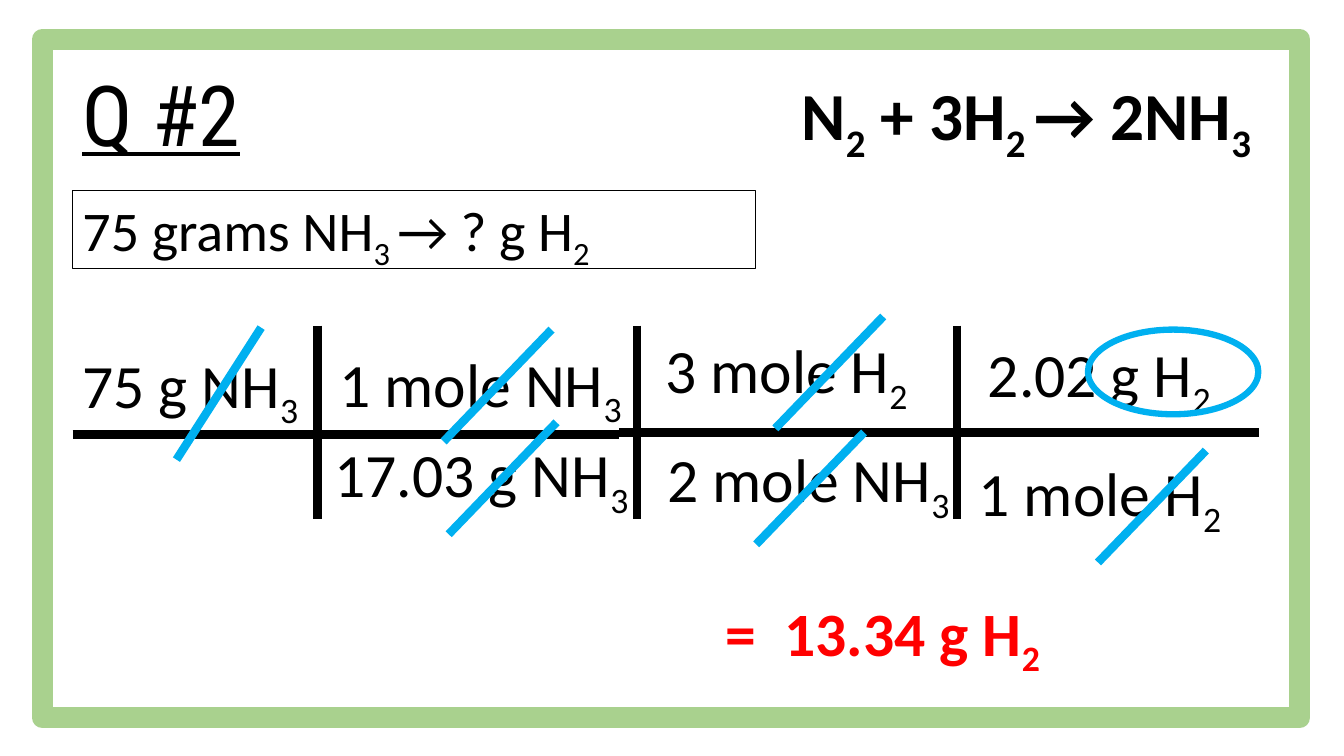
from pptx import Presentation, util as u
from pptx.dml.color import RGBColor
from pptx.enum import shapes, text
from pptx.oxml.ns import qn
from lxml import etree

BLACK = RGBColor(0x00, 0x00, 0x00)
WHITE = RGBColor(0xFF, 0xFF, 0xFF)
GREEN = RGBColor(0xA9, 0xD1, 0x8E)
BLUE = RGBColor(0x00, 0xB0, 0xF0)
RED = RGBColor(0xFF, 0x00, 0x00)

UNIT = u.Inches(0.1)  # one column or row of the slide grid
CELL_HEIGHT = 7.7
RECT = shapes.MSO_SHAPE.RECTANGLE
TOP, MIDDLE = text.MSO_ANCHOR.TOP, text.MSO_ANCHOR.MIDDLE


def grid(*lengths):
    return [round(length * UNIT) for length in lengths]


def write(shape, spans, size, color=BLACK, anchor=TOP, align=text.PP_ALIGN.LEFT,
          **formats):
    """Fill a shape with spans; every second span is a subscript."""
    frame = shape.text_frame
    frame.word_wrap = True
    frame.vertical_anchor = anchor
    para = frame.paragraphs[0]
    para.alignment = align
    formats = {"name": "Calibri", "size": u.Pt(size), **formats}
    for index, words in enumerate(spans):
        span = para.add_run()
        span.text = words
        for key, value in formats.items():
            setattr(span.font, key, value)
        span.font.color.rgb = color
        if index % 2:
            span.font._element.set("baseline", "-25000")
    return para


def draw_shape(page, kind, place, line, width, fill=None):
    shape = page.shapes.add_shape(kind, *grid(*place))
    shape.shadow.inherit = False
    if fill is None:
        shape.fill.background()
    else:
        shape.fill.solid()
        shape.fill.fore_color.rgb = fill
    shape.line.color.rgb = line
    shape.line.width = u.Pt(width)
    return shape


def draw_line(page, x, y, dx, dy, color):
    line = page.shapes.add_connector(
        shapes.MSO_CONNECTOR.STRAIGHT, *grid(x, y, x + dx, y + dy))
    line.line.color.rgb = color
    line.line.width = u.Pt(6)
    etree.SubElement(line._element.spPr, qn("a:effectLst"))


def add_heading(page, left, top, width):
    title = page.shapes.add_textbox(*grid(left, top, width / 2, 9.8))
    para = write(title, ["Q #2"], 60, name="Roboto Condensed", underline=True)
    para.line_spacing = 0.9
    equation = page.shapes.add_textbox(*grid(left + width - 54, top, 60, 9.1))
    write(equation, ["N", "2", " + 3H", "2 ", "→ 2NH", "3"], 48,
          align=text.PP_ALIGN.CENTER, bold=True)


def add_question(page, *place):
    box = draw_shape(page, RECT, place, BLACK, 0.75)
    write(box, ["75 grams NH", "3 ", "→ ? g H", "2"], 40)


def add_conversion(page, left, top):
    """Draw the unit factors, their dividers and the cancelled units."""
    factors = [
        (0, 3.3, 44, "75 g NH", "3"),
        (25, 12.2, 49.5, "17.03 g NH", "3"),
        (25.5, 3.2, 40.9, "1 mole NH", "3"),
        (58, 12.7, 30.4, "2 mole NH", "3"),
        (57.8, 1.9, 33.8, "3 mole H", "2"),
        (88.9, 14.1, 29.7, "1 mole H", "2"),
        (89.8, 2.2, 29.7, "2.02 g H", "2"),
    ]
    for x, y, width, *spans in factors:
        place = left + x, top + y, width, CELL_HEIGHT
        box = draw_shape(page, RECT, place, WHITE, 1, WHITE)
        write(box, spans, 44, anchor=MIDDLE)

    for column in range(3):
        draw_line(page, left + 24.3 + 31.7 * column, top + 0.9, 0, 19.2, BLACK)
    for x, y, width in [(0, 11.7, 54.2), (54.2, 11.5, 32), (85.7, 11.5, 32)]:
        draw_line(page, left + x, top + y, width, 0, BLACK)

    draw_line(page, left + 18.7, top + 1.1, -8.4, 13.1, BLUE)
    for x, y in [(48, 10.5), (47.5, 1.3), (78.5, 11.5), (80.4, 0), (112.4, 13.3)]:
        draw_line(page, left + x, top + y, -10.7, 11.1, BLUE)
    draw_shape(page, shapes.MSO_SHAPE.OVAL,
               (left + 100.7, top + 1.3, 16.9, 8.4), BLUE, 4.5)


def add_answer(page, *place):
    box = draw_shape(page, RECT, place, WHITE, 1, WHITE)
    para = write(box, ["=\t13.34 g H", "2"], 44, RED, MIDDLE, bold=True)
    stops = etree.SubElement(para._p.get_or_add_pPr(), qn("a:tabLst"))
    etree.SubElement(stops, qn("a:tab"), pos=str(u.Inches(0.58)), algn="l")


def main():
    deck = Presentation()
    deck.slide_width, deck.slide_height = u.Inches(13.33), u.Inches(7.5)
    page = deck.slides.add_slide(deck.slide_layouts[6])
    draw_shape(page, RECT, (4.2, 3.9, 124.7, 67.3), GREEN, 15, WHITE)
    add_heading(page, 7.2, 6.8, 118.6)
    add_question(page, 7.2, 18.9, 67.7, CELL_HEIGHT)
    add_conversion(page, 7.2, 31.4)
    add_answer(page, 71, 59.3, 54.8, CELL_HEIGHT)
    deck.save("out.pptx")


if __name__ == "__main__":
    main()
